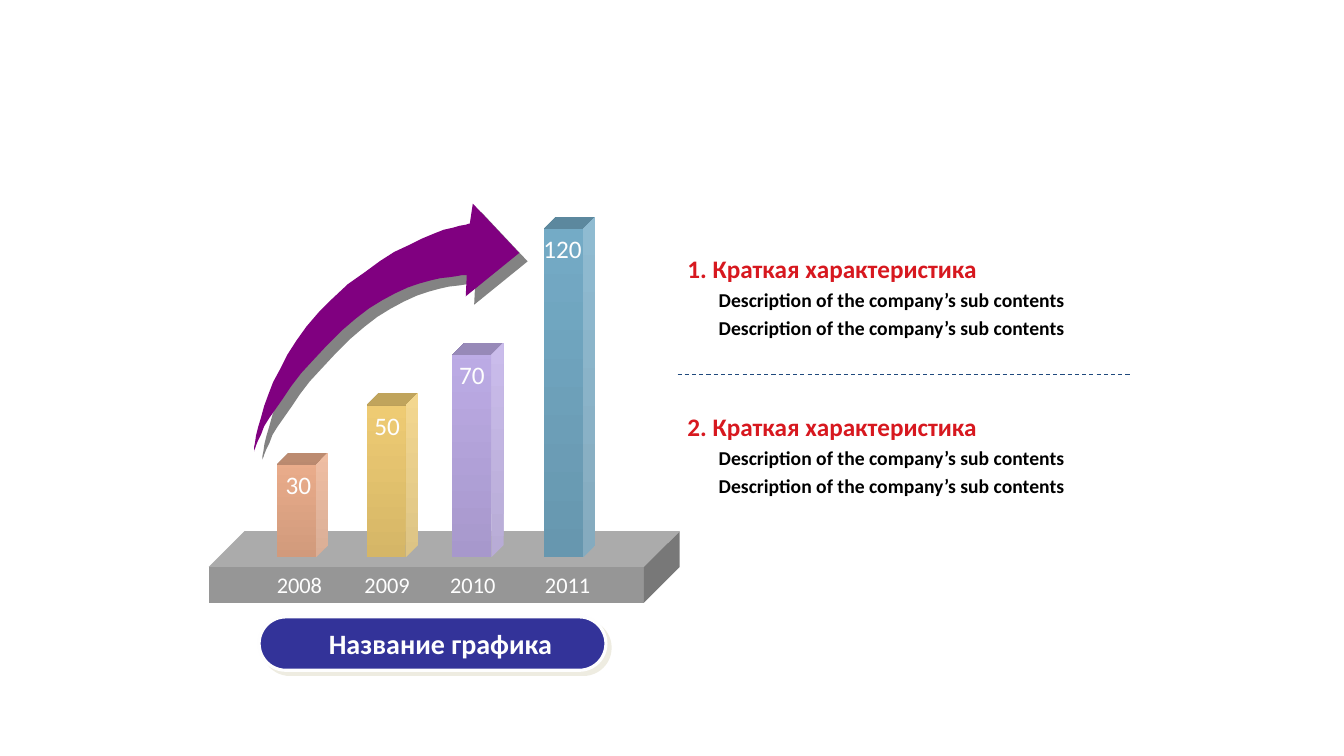
from pptx import Presentation, util as u
from pptx.dml.color import RGBColor
from pptx.enum import dml, shapes, text
from pptx.oxml.ns import qn
from lxml import etree

FONT = "Calibri"
WHITE = "FEFEFE"
BAR_BOTTOM = 5.53
BAR_WIDTH = 0.51

# year, value, bar centre, year centre, value centre, bar height, gradient
BARS = [
    ("2008", "30", 3.0, 2.97, 2.96, 1.04, ("D19A7C", "ECAE8C")),
    ("2009", "50", 3.89, 3.84, 3.84, 1.63, ("D5B667", "F0CD74")),
    ("2010", "70", 4.74, 4.69, 4.68, 2.13, ("A798CC", "BDACE6")),
    ("2011", "120", 5.65, 5.63, 5.58, 3.38, ("6797AF", "74ABC6")),
]

# Outline of the growth arrow in hundredths of an inch
ARROW = [
    (515, 251), (462, 294), (463, 273), (461, 273), (458, 273), (453, 274),
    (446, 275), (437, 276), (428, 278), (417, 281), (405, 285), (392, 291),
    (379, 298), (366, 306), (353, 316), (339, 328), (324, 343), (311, 357),
    (299, 370), (289, 383), (281, 395), (274, 405), (267, 415), (262, 423),
    (259, 431), (256, 437), (254, 442), (253, 445), (252, 447), (252, 448),
    (252, 444), (253, 439), (254, 432), (256, 424), (259, 414), (262, 403),
    (266, 392), (271, 379), (278, 366), (285, 352), (294, 338), (304, 324),
    (316, 310), (329, 297), (345, 282), (362, 270), (377, 259), (391, 250),
    (406, 243), (418, 237), (430, 232), (440, 228), (449, 226), (456, 224),
    (462, 223), (465, 222), (466, 222), (469, 202),
]


def color(value):
    return RGBColor.from_string(value)


def inches(*lengths):
    return [u.Inches(length) for length in lengths]


def add_shadow(shape, shade, opacity, distance):
    """Cast a sharp shadow to the lower right; distance is in points."""
    effects = shape._element.spPr.find(qn("a:effectLst"))
    shadow = etree.SubElement(effects, qn("a:outerShdw"), dist=str(u.Pt(distance)),
                              dir="2700000", algn="ctr", rotWithShape="0")
    tint = etree.SubElement(shadow, qn("a:srgbClr"), val=shade)
    etree.SubElement(tint, qn("a:alpha"), val=str(opacity * 1000))


def paint(shape, fill, line=None, width=1):
    shape.shadow.inherit = False
    shape.fill.solid()
    shape.fill.fore_color.rgb = color(fill)
    if line:
        shape.line.color.rgb = color(line)
        shape.line.width = u.Pt(width)
    else:
        shape.line.fill.background()


def add_preset(page, kind, place, adjustment):
    shape = page.shapes.add_shape(kind, *inches(*place))
    shape.adjustments[0] = adjustment
    return shape


def write(para, content, size, shade, bold=False):
    span = para.add_run()
    span.text = content
    span.font.name = FONT
    span.font.size = u.Pt(size)
    span.font.bold = bold
    span.font.color.rgb = color(shade)


def add_label(page, content, center, top, width, height, size, bold=False):
    box = page.shapes.add_textbox(*inches(center - width / 2, top, width, height))
    box.text_frame.word_wrap = False
    para = box.text_frame.paragraphs[0]
    para.alignment = text.PP_ALIGN.CENTER
    write(para, content, size, WHITE, bold)


def add_bar(page, center, height, gradient):
    """Add an upright block: a cube turned on its side and mirrored."""
    place = (center - height / 2, BAR_BOTTOM - height / 2 - BAR_WIDTH / 2, height, BAR_WIDTH)
    bar = add_preset(page, shapes.MSO_SHAPE.CUBE, place, 0.238)
    paint(bar, gradient[0])
    bar.rotation = 270
    bar._element.spPr.find(qn("a:xfrm")).set("flipV", "1")
    bar.fill.gradient()
    bar.fill.gradient_angle = 0
    for stop, shade, position in zip(bar.fill.gradient_stops, gradient, (0, 1)):
        stop.color.rgb = color(shade)
        stop.position = position


def add_summary(page, top, heading, details):
    box = page.shapes.add_textbox(*inches(6.72, top, 4.67, 1.02))
    frame = box.text_frame
    frame.word_wrap = True
    write(frame.paragraphs[0], heading, 18, "D7181F", bold=True)
    for detail in details:
        para = frame.add_paragraph()
        para._p.get_or_add_pPr().set("marL", str(u.Inches(0.31)))
        write(para, detail, 14, "000000", bold=True)
    for para in frame.paragraphs:
        para.line_spacing = 1.2


def add_divider(page):
    line = page.shapes.add_connector(shapes.MSO_CONNECTOR.STRAIGHT,
                                     *inches(6.72, 3.72, 11.23, 3.72))
    line.line.color.rgb = color("1F497D")
    line.line.width = u.Pt(0.75)
    line.line.dash_style = dml.MSO_LINE.DASH
    etree.SubElement(line._element.spPr, qn("a:effectLst"))


def add_growth_arrow(page):
    builder = page.shapes.build_freeform(*ARROW[0], scale=u.Inches(0.01))
    builder.add_line_segments(ARROW[1:], close=True)
    arrow = builder.convert_to_shape()
    paint(arrow, "800080")
    add_shadow(arrow, "080808", 50, 8.5)


def add_chart_name(page):
    pill = add_preset(page, shapes.MSO_SHAPE.ROUNDED_RECTANGLE, (2.57, 6.12, 3.44, 0.53), 0.5)
    paint(pill, "333399", WHITE, 2.25)
    add_shadow(pill, "EEECE1", 100, 4.2)
    add_label(page, "Название графика", 4.37, 6.17, 2.44, 0.44, 20, bold=True)


def main():
    deck = Presentation()
    deck.slide_width, deck.slide_height = inches(13.33, 7.5)
    page = deck.slides.add_slide(deck.slide_layouts[6])

    details = ["Description of the company’s sub contents"] * 2
    for number, top in ((1, 2.4), (2, 3.97)):
        add_summary(page, top, f"{number}. Краткая характеристика", details)
    add_divider(page)
    add_chart_name(page)
    add_growth_arrow(page)

    base = add_preset(page, shapes.MSO_SHAPE.CUBE, (2.07, 5.27, 4.67, 0.71), 0.499)
    paint(base, "969696")
    for year, value, center, year_center, value_center, height, gradient in BARS:
        add_bar(page, center, height, gradient)
        add_label(page, year, year_center, 5.62, 0.66, 0.37, 16)
        add_label(page, value, value_center, BAR_BOTTOM - height + 0.12, 0.66, 0.4, 18)

    deck.save("out.pptx")


if __name__ == "__main__":
    main()
